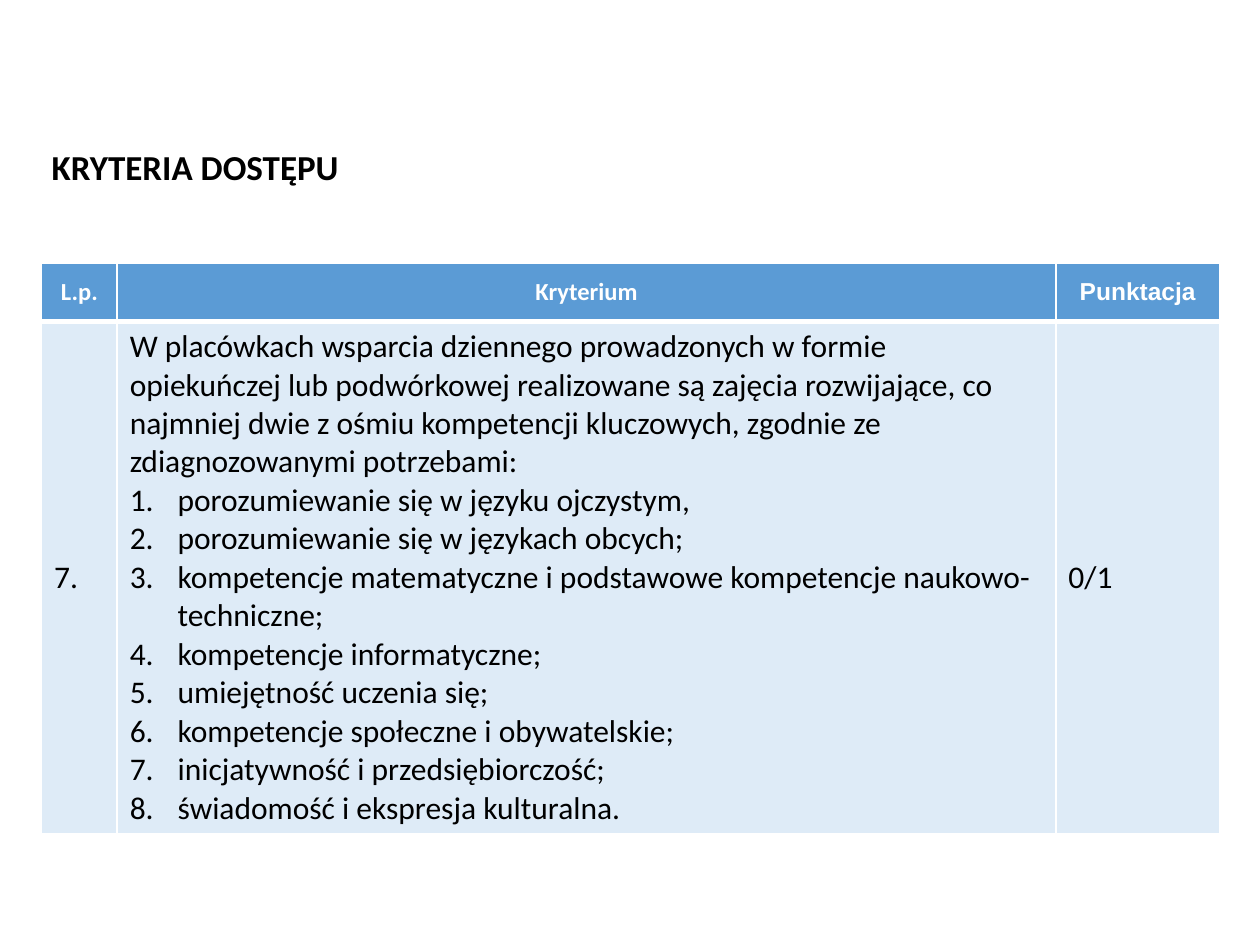
from lxml import etree
from pptx import Presentation
from pptx.dml.color import RGBColor
from pptx.enum.text import MSO_ANCHOR, MSO_AUTO_SIZE, PP_ALIGN
from pptx.oxml.ns import qn
from pptx.util import Inches, Pt

WHITE = RGBColor(0xFF, 0xFF, 0xFF)
BLACK = RGBColor(0x00, 0x00, 0x00)
BLUE = RGBColor(0x5B, 0x9B, 0xD5)
PALE_BLUE = RGBColor(0xDE, 0xEB, 0xF7)

MIDDLE = MSO_ANCHOR.MIDDLE
LEFT, CENTER = PP_ALIGN.LEFT, PP_ALIGN.CENTER
NO_AUTOFIT = MSO_AUTO_SIZE.NONE

BODY_FONT, ALT_FONT = "Calibri", "Arial"
TITLE_ONLY = 5
HANGING = Inches(0.38)

HEADERS = [("L.p.", BODY_FONT), ("Kryterium", BODY_FONT), ("Punktacja", ALT_FONT)]
INTRO = (
    "W placówkach wsparcia dziennego prowadzonych w formie opiekuńczej lub "
    "podwórkowej realizowane są zajęcia rozwijające, co najmniej dwie z ośmiu "
    "kompetencji kluczowych, zgodnie ze zdiagnozowanymi potrzebami:"
)
COMPETENCES = [
    "porozumiewanie się w języku ojczystym,",
    "porozumiewanie się w językach obcych;",
    "kompetencje matematyczne i podstawowe kompetencje naukowo-techniczne;",
    "kompetencje informatyczne;",
    "umiejętność uczenia się;",
    "kompetencje społeczne i obywatelskie;",
    "inicjatywność i przedsiębiorczość;",
    "świadomość i ekspresja kulturalna.",
]


class Deck:
    """Holds the style and the current slide; lengths are grid units."""

    COLUMNS, ROWS = 100, 75

    def __init__(self):
        self.prs = Presentation()
        self.prs.slide_width, self.prs.slide_height = Inches(10), Inches(7.5)
        self.s = self.prs.slides.add_slide(self.prs.slide_layouts[TITLE_ONLY])

    def across(self, columns):
        return round(self.prs.slide_width * columns / self.COLUMNS)

    def down(self, rows):
        return round(self.prs.slide_height * rows / self.ROWS)

    def add_text(self, p, text, size, color, bold=False, font=BODY_FONT, align=LEFT):
        p.alignment = align
        r = p.add_run()
        r.text = text
        r.font.name, r.font.size, r.font.bold = font, Pt(size), bold
        r.font.color.rgb = color

    def number(self, p):
        pPr = p._p.get_or_add_pPr()
        pPr.set("marL", str(HANGING))
        pPr.set("indent", str(-HANGING))
        etree.SubElement(pPr, qn("a:buFont"), typeface="+mj-lt")
        etree.SubElement(pPr, qn("a:buAutoNum"), type="arabicPeriod")

    def title(self, text, left, top, width, height):
        sp = self.s.shapes.title
        sp.left, sp.top = self.across(left), self.down(top)
        sp.width, sp.height = self.across(width), self.down(height)
        tf = sp.text_frame
        tf.word_wrap, tf.auto_size, tf.vertical_anchor = True, NO_AUTOFIT, MIDDLE
        self.add_text(tf.paragraphs[0], text, 20, BLACK, bold=True)

    def table(self, left, top, columns, rows):
        frame = self.s.shapes.add_table(
            len(rows), len(columns), self.across(left), self.down(top),
            self.across(sum(columns)), self.down(sum(rows)))
        table = frame.table
        table.horz_banding = False
        for column, width in zip(table.columns, columns):
            column.width = self.across(width)
        for row, height in zip(table.rows, rows):
            row.height = self.down(height)
        return table

    def style_cell(self, cell, fill, top=1, bottom=1):
        cell.vertical_anchor = MIDDLE
        cell.fill.solid()
        cell.fill.fore_color.rgb = fill
        tcPr = cell._tc.get_or_add_tcPr()
        widths = {"a:lnL": 1, "a:lnR": 1, "a:lnT": top, "a:lnB": bottom}
        for i, (side, width) in enumerate(widths.items()):
            ln = etree.Element(qn(side), w=str(Pt(width)))
            solid = etree.SubElement(ln, qn("a:solidFill"))
            etree.SubElement(solid, qn("a:srgbClr"), val=str(WHITE))
            tcPr.insert(i, ln)


def main():
    deck = Deck()

    # Heading
    deck.title("KRYTERIA DOSTĘPU", 3.1, 11, 26.3, 4.4)

    # Criteria table
    table = deck.table(3.3, 20.9, [6, 74.5, 13], [4.6, 40.5])

    # Header row
    for cell, (text, font) in zip(table.rows[0].cells, HEADERS):
        deck.style_cell(cell, BLUE, bottom=3)
        deck.add_text(cell.text_frame.paragraphs[0], text, 14, WHITE, True, font, CENTER)

    # Criterion row
    for cell, text in zip(table.rows[1].cells, ["7.", INTRO, "0/1"]):
        deck.style_cell(cell, PALE_BLUE, top=3)
        deck.add_text(cell.text_frame.paragraphs[0], text, 18, BLACK)

    # Numbered competences
    tf = table.cell(1, 1).text_frame
    for text in COMPETENCES:
        p = tf.add_paragraph()
        deck.number(p)
        deck.add_text(p, text, 18, BLACK)

    deck.prs.save("out.pptx")


if __name__ == "__main__":
    main()
